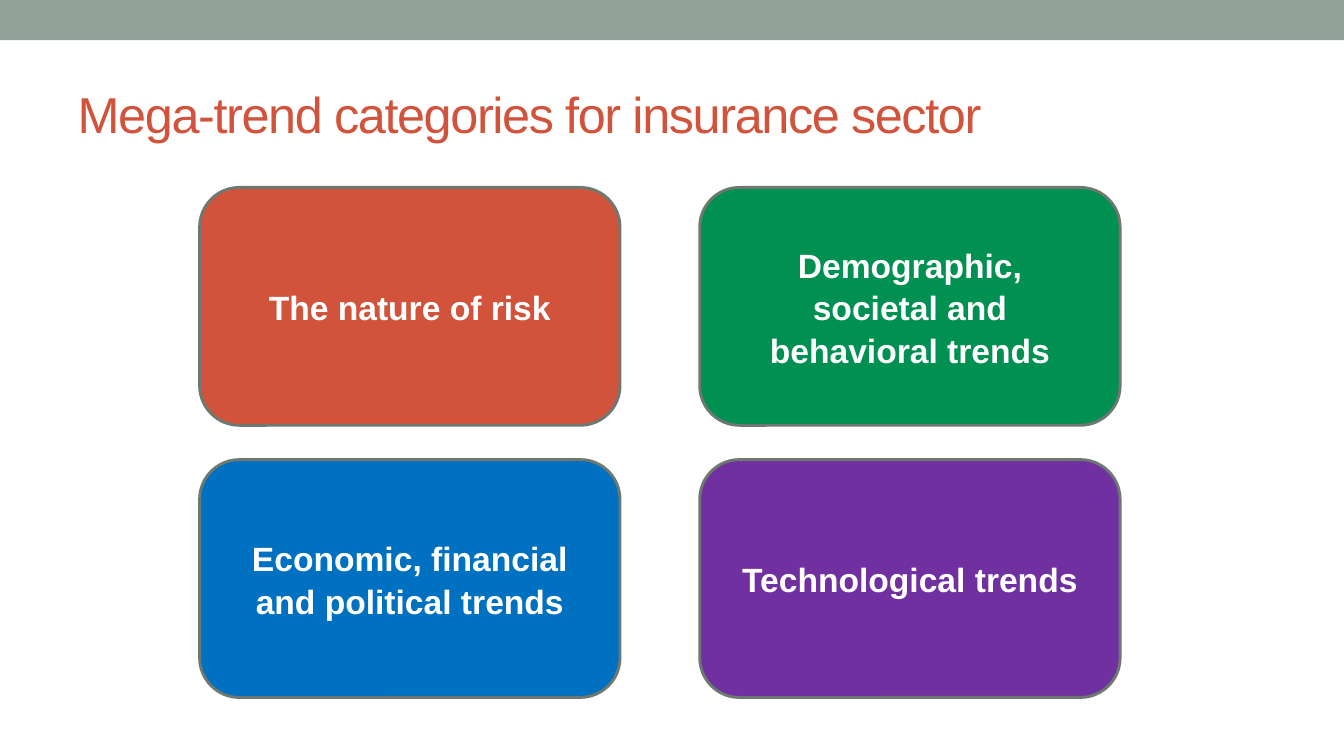
from dataclasses import dataclass

import pptx
import pptx.dml.color
import pptx.enum.shapes
import pptx.enum.text
import pptx.util

SHAPES = pptx.enum.shapes.MSO_SHAPE
ALIGN = pptx.enum.text.PP_ALIGN
ANCHOR = pptx.enum.text.MSO_ANCHOR
AUTO_SIZE = pptx.enum.text.MSO_AUTO_SIZE

COLORS = {
    "bar": "93A299",
    "title": "D2533C",
    "border": "6D7871",
    "text": "FFFFFF",
    "risk": "D2533C",
    "demographic": "009051",
    "economic": "0070C0",
    "technological": "7030A0",
}
FRAME = {"word_wrap": True, "auto_size": AUTO_SIZE.NONE, "vertical_anchor": ANCHOR.MIDDLE}
CARD_INSETS = {"margin_left": pptx.util.Inches(0.23), "margin_right": pptx.util.Inches(0.23)}
TITLE_FONT = {"name": "Arial", "size": pptx.util.Pt(36), "bold": False}
CARD_FONT = {"name": "Arial", "size": pptx.util.Pt(24), "bold": True}


@dataclass(frozen=True)
class Grid:
    left: float
    top: float
    width: float
    height: float
    col_step: float
    row_step: float


@dataclass(frozen=True)
class Card:
    col: int
    row: int
    text: str
    color: str


GRID = Grid(left=1.98, top=1.86, width=4.17, height=2.36, col_step=4.96, row_step=2.7)
CARDS = [
    Card(0, 0, "The nature of risk", "risk"),
    Card(1, 0, "Demographic, societal and behavioral trends", "demographic"),
    Card(0, 1, "Economic, financial and political trends", "economic"),
    Card(1, 1, "Technological trends", "technological"),
]


def rgb(name: str) -> pptx.dml.color.RGBColor:
    return pptx.dml.color.RGBColor.from_string(COLORS[name])


def apply(target: object, values: dict) -> None:
    for key, value in values.items():
        setattr(target, key, value)


def box(left: float, top: float, width: float, height: float) -> dict:
    lengths = {"left": left, "top": top, "width": width, "height": height}
    return {key: pptx.util.Inches(value) for key, value in lengths.items()}


def add_filled(s: pptx.slide.Slide, kind: SHAPES, place: dict, color: str) -> pptx.shapes.autoshape.Shape:
    sp = s.shapes.add_shape(kind, **place)
    sp.shadow.inherit = False
    sp.fill.solid()
    sp.fill.fore_color.rgb = rgb(color)
    return sp


def write(sp: pptx.shapes.autoshape.Shape, text: str, font: dict, color: str,
          paragraph: dict) -> pptx.text.text._Run:
    tf = sp.text_frame
    apply(tf, FRAME)
    p = tf.paragraphs[0]
    apply(p, paragraph)
    r = p.add_run()
    r.text = text
    apply(r.font, font)
    r.font.color.rgb = rgb(color)
    return r


def add_title(s: pptx.slide.Slide, text: str) -> None:
    sp = s.shapes.title
    apply(sp, box(0.67, 0.58, 12, 1.08))
    r = write(sp, text, TITLE_FONT, "title", {"alignment": ALIGN.LEFT})
    r.font._element.set("spc", "-100")


def add_card(s: pptx.slide.Slide, card: Card) -> None:
    place = box(GRID.left + card.col * GRID.col_step, GRID.top + card.row * GRID.row_step,
                GRID.width, GRID.height)
    sp = add_filled(s, SHAPES.ROUNDED_RECTANGLE, place, card.color)
    sp.line.color.rgb = rgb("border")
    sp.line.width = pptx.util.Pt(2.08)
    apply(sp.text_frame, CARD_INSETS)
    write(sp, card.text, CARD_FONT, "text", {"alignment": ALIGN.CENTER, "line_spacing": 1.05})


def main() -> None:
    prs = pptx.Presentation()
    apply(prs, {"slide_width": pptx.util.Inches(13.33), "slide_height": pptx.util.Inches(7.5)})
    s = prs.slides.add_slide(prs.slide_layouts[5])
    bar = add_filled(s, SHAPES.RECTANGLE, box(0, 0, 13.33, 0.4), "bar")
    bar.line.fill.background()
    add_title(s, "Mega-trend categories for insurance sector")
    for card in CARDS:
        add_card(s, card)
    prs.save("out.pptx")


if __name__ == "__main__":
    main()
